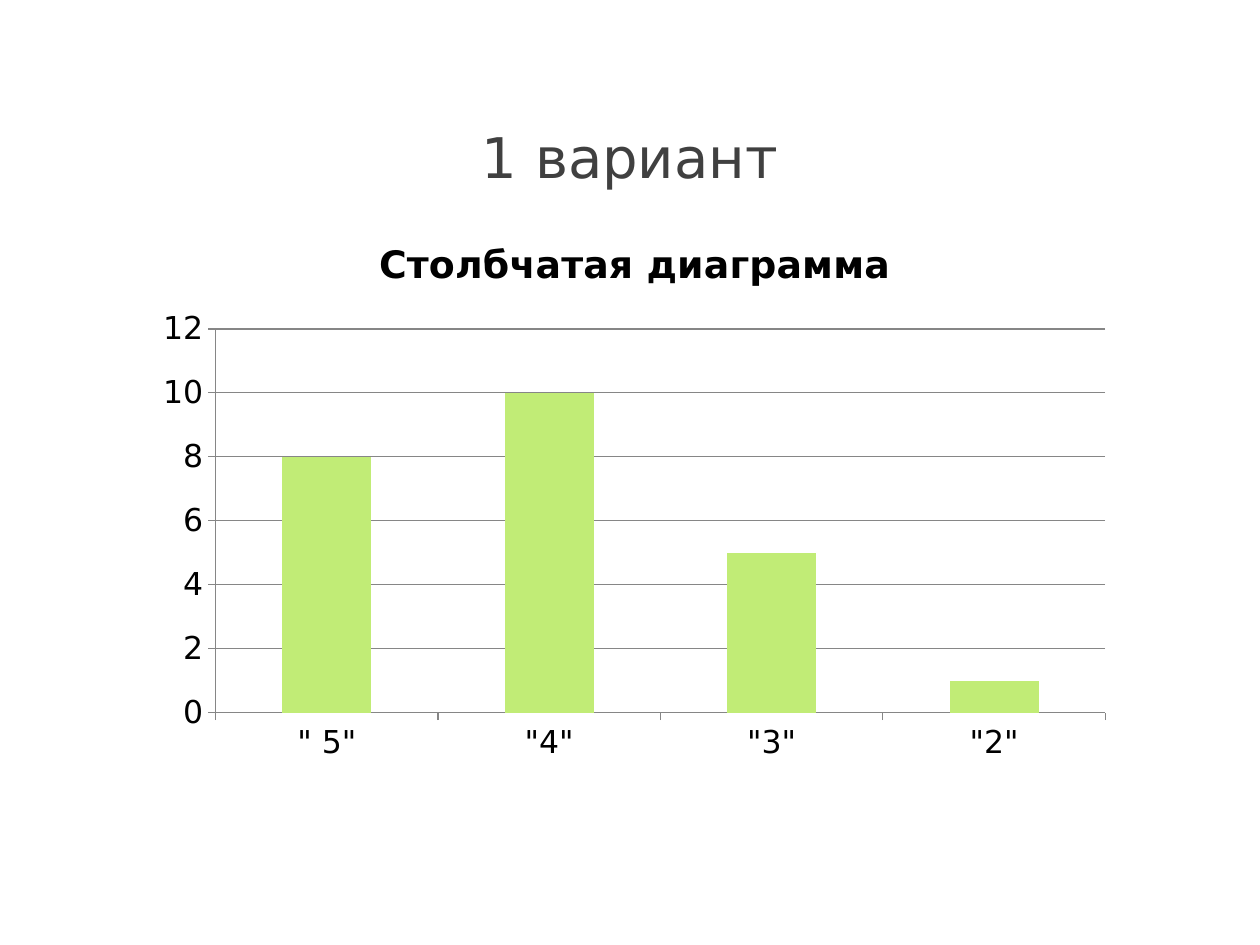
from lxml.etree import SubElement
from pptx import Presentation
from pptx.chart.data import CategoryChartData
from pptx.dml.color import RGBColor
from pptx.enum.chart import XL_CHART_TYPE as ChartType, XL_TICK_MARK as Tick
from pptx.enum.text import MSO_ANCHOR as Anchor, PP_ALIGN as Align
from pptx.oxml.ns import qn
from pptx.util import Pt

# Content
TITLE = "1 вариант"
CHART_TITLE = "Столбчатая диаграмма"
GRADES = [('" 5"', 8), ('"4"', 10), ('"3"', 5), ('"2"', 1)]

# Style
FONT = "DejaVu Sans"
GREY = RGBColor(0x40, 0x40, 0x40)
BLACK = RGBColor(0, 0, 0)
GREEN = RGBColor(0xC1, 0xEC, 0x76)
LINE = RGBColor(0x86, 0x86, 0x86)

# Geometry in px: left, top, width, height
PX = 914400 // 126
PAGE = (1260, 945)
TITLE_BOX = (139, 93, 982, 127)
CHART_BOX = (144, 214, 982, 558)
PLOT_BOX = (216, 329, 890, 384)


def emu(box):
    return [value * PX for value in box]


def style(font, size, color, bold=False):
    font.name, font.size, font.bold = FONT, Pt(size), bold
    font.color.rgb = color


def place_plot(chart):
    """Fix the inner plot area as fractions of the chart frame."""
    left, top, width, height = CHART_BOX
    x, y, w, h = PLOT_BOX
    fractions = {"x": (x - left) / width, "y": (y - top) / height,
                 "w": w / width, "h": h / height}
    plot_area = chart.plots[0]._element.getparent()
    layout = plot_area.find(qn("c:layout"))
    if layout is None:
        layout = SubElement(plot_area, qn("c:layout"))
        plot_area.insert(0, layout)
    manual = SubElement(layout, qn("c:manualLayout"))
    settings = [("layoutTarget", "inner"), ("xMode", "edge"), ("yMode", "edge")]
    settings += [(name, f"{value:.3f}") for name, value in fractions.items()]
    for name, value in settings:
        SubElement(manual, qn(f"c:{name}")).set("val", value)


deck = Presentation()
deck.slide_width, deck.slide_height = emu(PAGE)
page = deck.slides.add_slide(deck.slide_layouts[6])

# Title
frame = page.shapes.add_textbox(*emu(TITLE_BOX)).text_frame
frame.word_wrap = True
frame.vertical_anchor = Anchor.MIDDLE
frame.text = TITLE
para = frame.paragraphs[0]
para.alignment = Align.CENTER
style(para.runs[0].font, 32, GREY)

# Column chart
data = CategoryChartData()
data.categories = [grade for grade, count in GRADES]
data.add_series("Series 1", [count for grade, count in GRADES])
chart = page.shapes.add_chart(
    ChartType.COLUMN_CLUSTERED, *emu(CHART_BOX), data).chart
style(chart.font, 18, BLACK)
chart.has_legend = False
chart.has_title = True
chart.chart_title.include_in_layout = False
heading = chart.chart_title.text_frame
heading.text = CHART_TITLE
style(heading.paragraphs[0].runs[0].font, 21.6, BLACK, bold=True)

plot = chart.plots[0]
plot.gap_width = 150
plot.vary_by_categories = False
fill = plot.series[0].format.fill
fill.solid()
fill.fore_color.rgb = GREEN
place_plot(chart)

# Axes
values = chart.value_axis
values.minimum_scale, values.maximum_scale, values.major_unit = 0, 12, 2
values.has_major_gridlines = True
for axis in (chart.category_axis, values):
    axis.major_tick_mark = Tick.OUTSIDE
    axis.minor_tick_mark = Tick.NONE
for part in (chart.category_axis, values, values.major_gridlines):
    part.format.line.color.rgb = LINE
    part.format.line.width = Pt(0.75)

deck.save("out.pptx")
